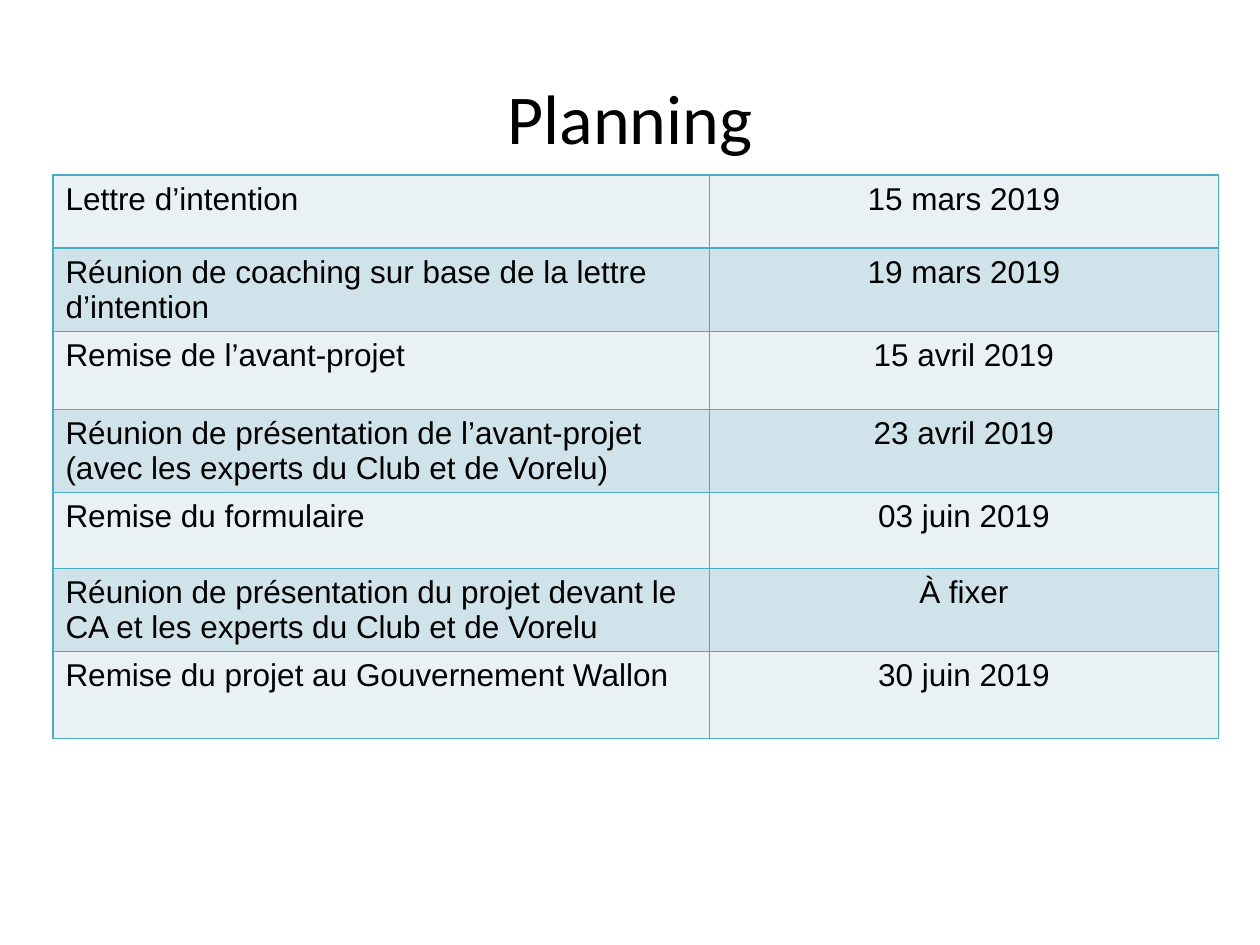
from pptx import Presentation
from pptx.dml.color import RGBColor
from pptx.enum.text import MSO_ANCHOR, PP_ALIGN
from pptx.oxml import parse_xml
from pptx.oxml.ns import nsdecls
from pptx.util import Inches, Pt

ROWS = [
    ("Lettre d’intention", "15 mars 2019", 0.58),
    ("Réunion de coaching sur base de la lettre d’intention", "19 mars 2019", 0.66),
    ("Remise de l’avant-projet", "15 avril 2019", 0.62),
    ("Réunion de présentation de l’avant-projet\n(avec les experts du Club et de Vorelu)", "23 avril 2019", 0.66),
    ("Remise du formulaire", "03 juin 2019", 0.6),
    ("Réunion de présentation du projet devant le CA et les experts du Club et de Vorelu", "À fixer", 0.66),
    ("Remise du projet au Gouvernement Wallon", "30 juin 2019", 0.69),
]
WIDTHS = (5.21, 4.04)
ALIGNS = (PP_ALIGN.LEFT, PP_ALIGN.CENTER)
BANDS = ("E9F1F5", "D0E3EA")
TITLE = {"name": "Calibri", "size": Pt(40)}
BODY = {"name": "Arial", "size": Pt(18), "bold": False}


def color(code):
    return RGBColor.from_string(code)


def style(frame, form, align):
    for para in frame.paragraphs:
        para.alignment = align
        for key, value in form.items():
            setattr(para.font, key, value)
        para.font.color.rgb = color("000000")


def border(cell, code, width):
    props = cell._tc.get_or_add_tcPr()
    for spot, side in enumerate(("lnL", "lnR", "lnT", "lnB")):
        line = parse_xml(
            f'<a:{side} {nsdecls("a")} w="{Pt(width)}"><a:solidFill>'
            f'<a:srgbClr val="{code}"/></a:solidFill></a:{side}>'
        )
        props.insert(spot, line)


def add_title(slide, text):
    title = slide.shapes.title
    title.left, title.top = Inches(0.5), Inches(0.3)
    title.width, title.height = Inches(9), Inches(1.25)
    frame = title.text_frame
    frame.text = text
    frame.vertical_anchor = MSO_ANCHOR.MIDDLE
    style(frame, TITLE, PP_ALIGN.CENTER)


def add_plan(slide):
    high = sum(row[2] for row in ROWS)
    table = slide.shapes.add_table(
        len(ROWS), len(WIDTHS), Inches(0.42), Inches(1.39),
        Inches(sum(WIDTHS)), Inches(high),
    ).table
    table.first_row = False
    for column, width in zip(table.columns, WIDTHS):
        column.width = Inches(width)
    for r, (step, date, height) in enumerate(ROWS):
        table.rows[r].height = Inches(height)
        for c, text in enumerate((step, date)):
            cell = table.cell(r, c)
            cell.text = text
            cell.fill.solid()
            cell.fill.fore_color.rgb = color(BANDS[r % 2])
            style(cell.text_frame, BODY, ALIGNS[c])
            border(cell, "4BACC6", 1)


def main():
    deck = Presentation()
    deck.slide_width, deck.slide_height = Inches(10), Inches(7.5)
    slide = deck.slides.add_slide(deck.slide_layouts[5])
    add_title(slide, "Planning")
    add_plan(slide)
    deck.save("out.pptx")


if __name__ == "__main__":
    main()
